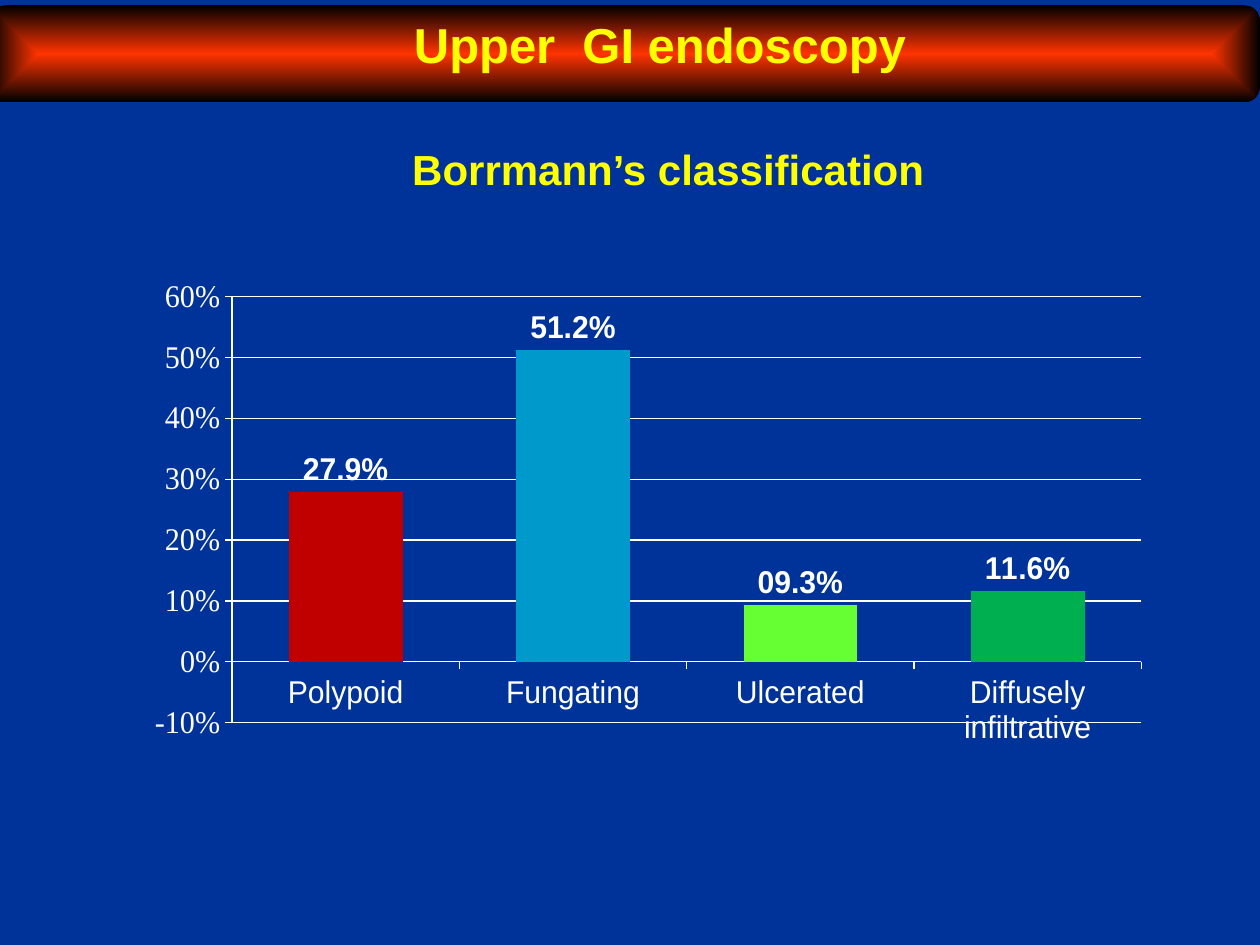
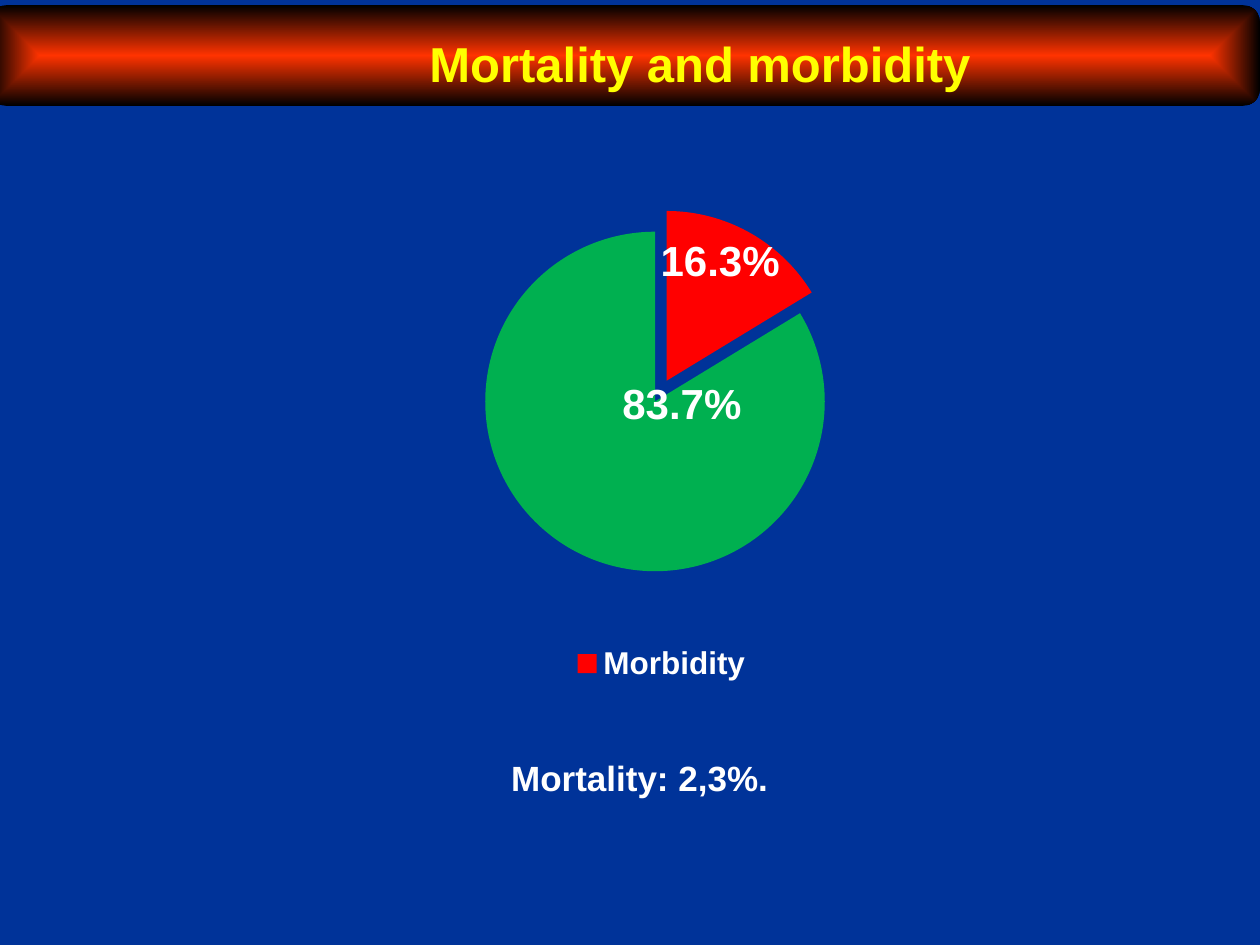
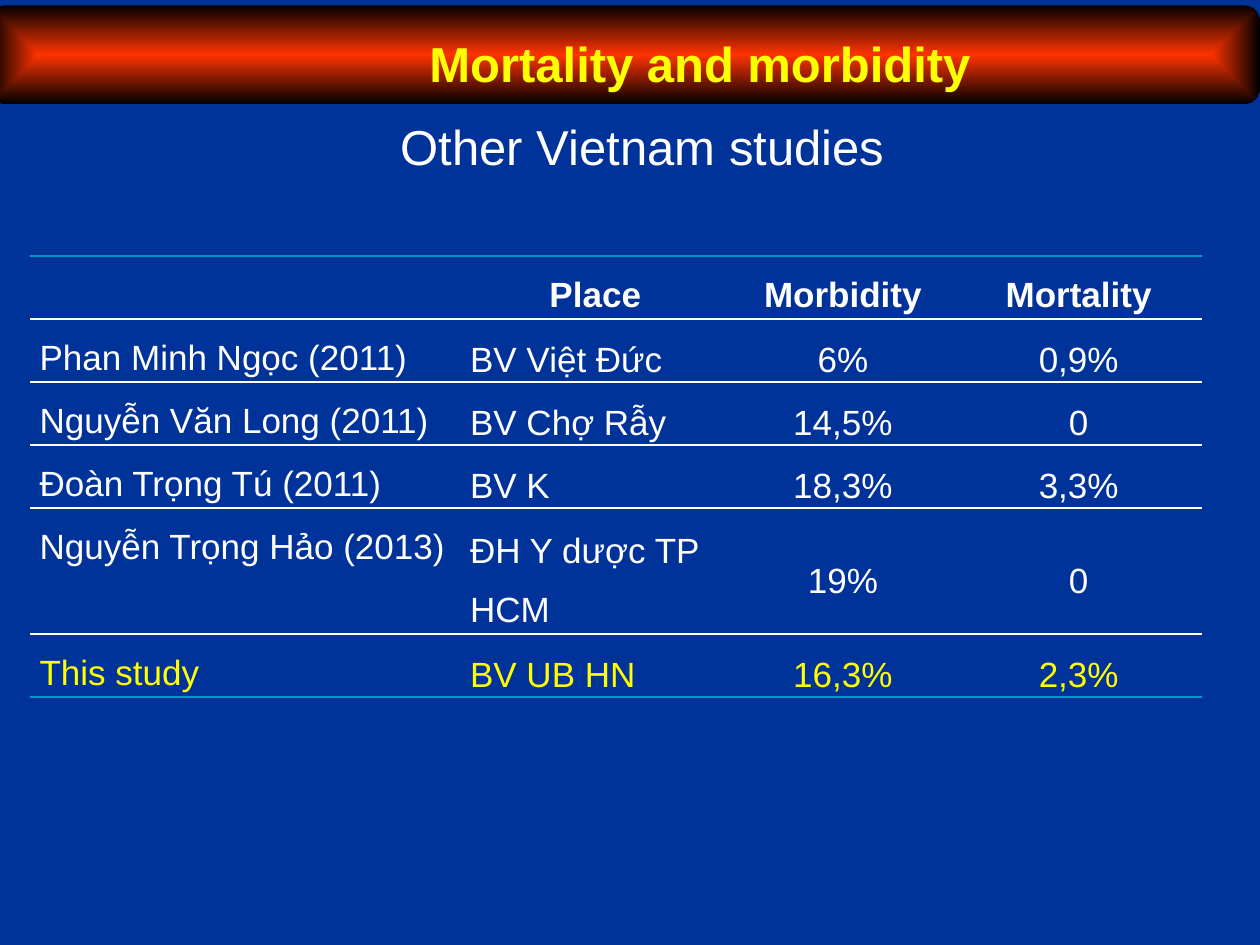
from lxml import etree
from pptx import Presentation
from pptx.chart import data as chart_data
from pptx.dml import color
from pptx.enum import chart as charts, shapes, text
from pptx.oxml import ns, parse_xml
from pptx.util import Pt

COLORS = {
    "blue": "003399", "white": "FFFFFF", "yellow": "FFFF00", "cyan": "0099CC",
    "maroon": "C00000", "lime": "66FF33", "green": "00B050", "red": "FF0000",
    "orange": "FF3300", "black": "000000",
}
SANS = "Arial"
SERIF = "Times New Roman"
MORTALITY_TITLE = "Mortality and morbidity"
STUDIES = [
    ["", "Place", "Morbidity", "Mortality"],
    ["Phan Minh Ngọc (2011)", "BV Việt Đức", "6%", "0,9%"],
    ["Nguyễn Văn Long (2011)", "BV Chợ Rẫy", "14,5%", "0"],
    ["Đoàn Trọng Tú (2011)", "BV K", "18,3%", "3,3%"],
    ["Nguyễn Trọng Hảo (2013)", "ĐH Y dược TP HCM", "19%", "0"],
    ["This study", "BV UB HN", "16,3%", "2,3%"],
]


def rgb(name):
    return color.RGBColor.from_string(COLORS[name])


def style_font(font, size, tint="white", bold=False, name=SANS):
    font.size, font.bold, font.name = Pt(size), bold, name
    font.color.rgb = rgb(tint)


def chart_element(tag, value=None):
    element = etree.Element(ns.qn(f"c:{tag}"))
    if value is not None:
        element.set("val", str(value))
    return element


def manual_layout(**settings):
    layout = chart_element("layout")
    manual = chart_element("manualLayout")
    layout.append(manual)
    for tag, value in settings.items():
        manual.append(chart_element(tag, value))
    return layout


def place_plot(chart, x, y, w, h):
    area = chart._chartSpace.chart.plotArea
    for old in area.findall(ns.qn("c:layout")):
        area.remove(old)
    area.insert(0, manual_layout(layoutTarget="inner", xMode="edge", yMode="edge",
                                 x=x, y=y, w=w, h=h))


def add_page(deck):
    page = deck.slides.add_slide(deck.slide_layouts[6])
    page.background.fill.solid()
    page.background.fill.fore_color.rgb = rgb("blue")
    return page


def add_band(page, height):
    band = page.shapes.add_shape(shapes.MSO_SHAPE.ROUNDED_RECTANGLE,
                                 Pt(-6), Pt(3), Pt(726), Pt(height))
    band.shadow.inherit = False
    band.line.fill.background()
    stops = "".join(
        f'<a:gs pos="{position}"><a:srgbClr val="{COLORS[name]}"/></a:gs>'
        for position, name in [(0, "orange"), (100000, "black")])
    gradient = parse_xml(
        f'<a:gradFill {ns.nsdecls("a")} rotWithShape="1"><a:gsLst>{stops}</a:gsLst>'
        '<a:path path="shape"><a:fillToRect l="50000" t="50000" r="50000" b="50000"/>'
        '</a:path></a:gradFill>')
    band._element.spPr.find(ns.qn("a:prstGeom")).addnext(gradient)


def add_label(page, words, left, top, width, size, tint="yellow", bold=True,
              align=text.PP_ALIGN.LEFT):
    box = page.shapes.add_textbox(Pt(left), Pt(top), Pt(width), Pt(size * 1.2 + 7.2))
    box.text_frame.word_wrap = True
    para = box.text_frame.paragraphs[0]
    para.text, para.alignment = words, align
    style_font(para.font, size, tint, bold)


def add_mortality_title(page):
    add_label(page, MORTALITY_TITLE, 224, 15.5, 352, 28, align=text.PP_ALIGN.CENTER)


def add_chart(page, kind, left, top, width, height, categories, values, number_format):
    data = chart_data.CategoryChartData(number_format=number_format)
    data.categories = categories
    data.add_series("Series 1", values)
    chart = page.shapes.add_chart(kind, Pt(left), Pt(top), Pt(width), Pt(height), data).chart
    chart.has_title = False
    chart.has_legend = False
    style_font(chart.font, 18, name=SERIF)
    return chart


def color_points(chart, names):
    for index, name in enumerate(names):
        fill = chart.plots[0].series[0].points[index].format.fill
        fill.solid()
        fill.fore_color.rgb = rgb(name)


def add_findings_chart(page):
    chart = add_chart(page, charts.XL_CHART_TYPE.COLUMN_CLUSTERED, 88.5, 140.5, 581, 330,
                      ["Polypoid", "Fungating", "Ulcerated", "Diffusely infiltrative"],
                      [0.279, 0.512, 0.093, 0.116], "0.0%")
    plot = chart.plots[0]
    plot.gap_width = 100
    plot.vary_by_categories = False
    color_points(chart, ["maroon", "cyan", "lime", "green"])
    labels = plot.series[0].data_labels
    labels.show_value = True
    labels.number_format, labels.number_format_is_linked = "00.0%", False
    labels.position = charts.XL_LABEL_POSITION.OUTSIDE_END
    style_font(labels.font, 18, bold=True)
    value_axis, category_axis = chart.value_axis, chart.category_axis
    value_axis.minimum_scale, value_axis.maximum_scale = -0.1, 0.6
    value_axis.major_unit = 0.1
    value_axis.tick_labels.number_format = "0%"
    value_axis.tick_labels.number_format_is_linked = False
    value_axis.has_major_gridlines = True
    style_font(value_axis.tick_labels.font, 18, name=SERIF)
    style_font(category_axis.tick_labels.font, 18)
    for line in (value_axis.format.line, category_axis.format.line,
                 value_axis.major_gridlines.format.line):
        line.color.rgb = rgb("white")
        line.width = Pt(0.75)
    place_plot(chart, 0.034, 0.088, 0.935, 0.738)


def shift_percent_label(point, x, y):
    label = point.data_label
    label.position = charts.XL_LABEL_POSITION.CENTER
    style_font(label.font, 24, bold=True)
    element = label._dLbl
    element.find(ns.qn("c:showVal")).set("val", "0")
    element.find(ns.qn("c:showPercent")).set("val", "1")
    number = chart_element("numFmt")
    number.set("formatCode", "0.0%")
    number.set("sourceLinked", "0")
    index = element.find(ns.qn("c:idx"))
    index.addnext(number)
    index.addnext(manual_layout(x=x, y=y))


def add_morbidity_chart(page):
    chart = add_chart(page, charts.XL_CHART_TYPE.PIE, 133, 85, 490, 308,
                      ["Morbidity", ""], [16.3, 83.7], "General")
    color_points(chart, ["red", "green"])
    series = chart.plots[0].series[0]
    labels = series.data_labels
    labels.show_value, labels.show_percentage = False, True
    labels.number_format, labels.number_format_is_linked = "0.0%", False
    style_font(labels.font, 24, bold=True)
    for leader in labels._element.findall(ns.qn("c:showLeaderLines")):
        leader.set("val", "0")
    for index, (x, y) in enumerate([(0.014, -0.083), (0.08, -0.13)]):
        shift_percent_label(series.points[index], x, y)
    slice_index = series._element.find(ns.qn("c:dPt")).find(ns.qn("c:idx"))
    slice_index.addnext(chart_element("explosion", 14))
    chart.has_legend = True
    legend = chart.legend
    legend.position = charts.XL_LEGEND_POSITION.BOTTOM
    legend.include_in_layout = False
    style_font(legend.font, 18, bold=True)
    unlabelled = chart_element("legendEntry")
    unlabelled.extend([chart_element("idx", 1), chart_element("delete", 1)])
    legend._element.find(ns.qn("c:legendPos")).addnext(unlabelled)
    place_plot(chart, 0.294, 0.154, 0.397, 0.63)


def set_borders(cell, top, bottom):
    properties = cell._tc.get_or_add_tcPr()
    sides = [("L", None), ("R", None), ("T", top), ("B", bottom)]
    for position, (side, name) in enumerate(sides):
        paint = (f'<a:solidFill><a:srgbClr val="{COLORS[name]}"/></a:solidFill>'
                 if name else "<a:noFill/>")
        properties.insert(position, parse_xml(
            f'<a:ln{side} {ns.nsdecls("a")} w="{Pt(1)}">{paint}</a:ln{side}>'))


def fill_cell(cell, words, row, column):
    last = len(STUDIES) - 1
    cell.fill.background()
    cell.margin_left = cell.margin_right = Pt(5.4)
    cell.margin_top = cell.margin_bottom = 0
    set_borders(cell, "white" if row else "cyan", "cyan" if row == last else "white")
    middle = row > 0 and column > 0
    cell.vertical_anchor = text.MSO_ANCHOR.MIDDLE if middle else text.MSO_ANCHOR.TOP
    para = cell.text_frame.paragraphs[0]
    para.text, para.line_spacing = words, 1.5
    centered = row == 0 or column > 1
    para.alignment = text.PP_ALIGN.CENTER if centered else text.PP_ALIGN.LEFT
    style_font(para.font, 20, "yellow" if row == last else "white", row == 0)


def add_studies_table(page):
    widths, heights = [246, 154, 129, 140.5], [29.5] * 5 + [19.5]
    table = page.shapes.add_table(len(heights), len(widths), Pt(17.2), Pt(146.2),
                                  Pt(sum(widths)), Pt(252)).table
    table.first_row = table.horz_banding = False
    for column, width in zip(table.columns, widths):
        column.width = Pt(width)
    for row, height in zip(table.rows, heights):
        row.height = Pt(height)
    page.shapes[-1].height = Pt(252)
    for row, study in enumerate(STUDIES):
        for column, words in enumerate(study):
            fill_cell(table.cell(row, column), words, row, column)


def main():
    deck = Presentation()
    deck.slide_width, deck.slide_height = Pt(720), Pt(540)

    endoscopy = add_page(deck)
    add_band(endoscopy, 55.5)
    add_label(endoscopy, "Borrmann’s classification", 228.5, 78.5, 360, 24)
    add_findings_chart(endoscopy)
    add_label(endoscopy, "Upper  GI endoscopy", 229.5, 4.5, 302, 28)

    outcome = add_page(deck)
    add_band(outcome, 57.5)
    add_mortality_title(outcome)
    add_morbidity_chart(outcome)
    add_label(outcome, "Mortality: 2,3%.", 285, 429, 164, 20, "white")

    studies = add_page(deck)
    add_band(studies, 56.5)
    add_studies_table(studies)
    add_label(studies, "Other Vietnam studies", 222, 63, 300, 28, "white", False)
    add_mortality_title(studies)

    deck.save("out.pptx")


if __name__ == "__main__":
    main()
